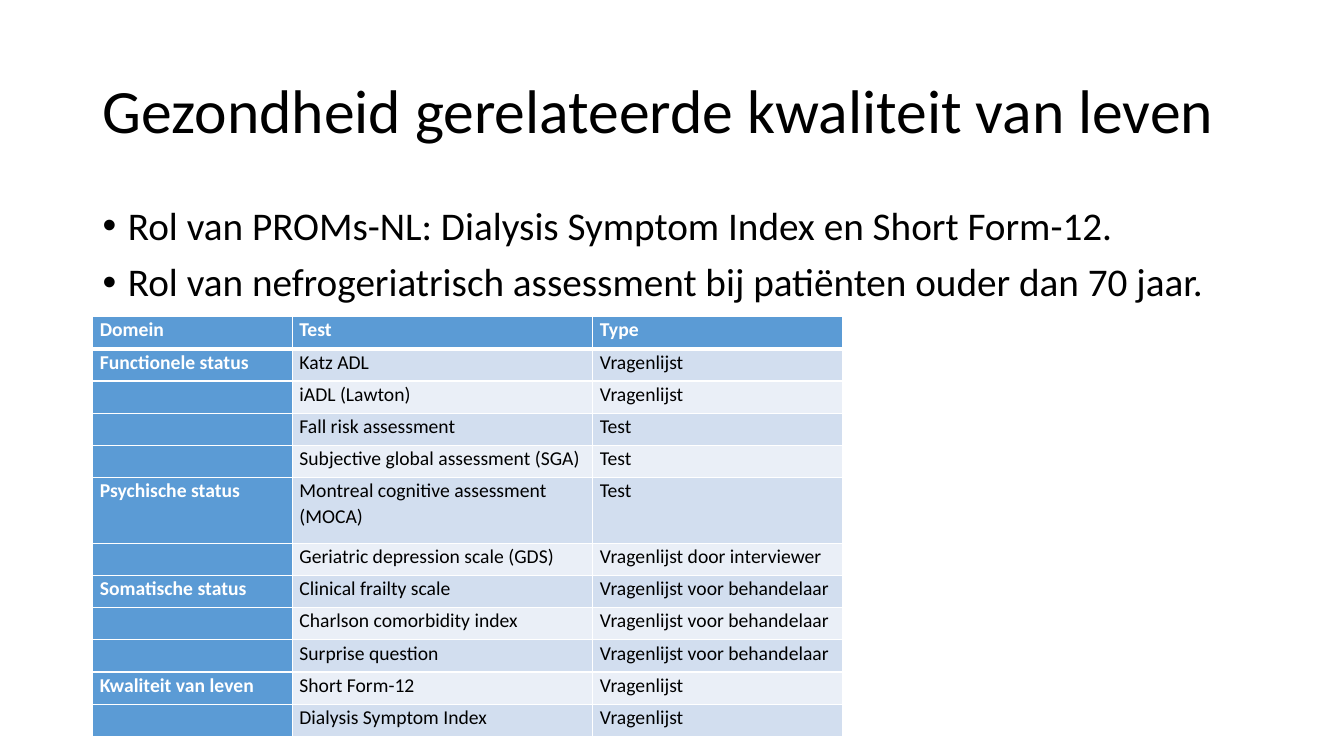
from lxml.etree import SubElement
from pptx import Presentation
from pptx.dml.color import RGBColor
from pptx.enum.text import MSO_ANCHOR
from pptx.oxml.ns import qn
from pptx.util import Inches, Pt

COLORS = {"text": "000000", "white": "FFFFFF", "header": "5B9BD5",
          "odd": "D2DEEF", "even": "EAEFF7"}
FONT = "Calibri"
LEFT, TEXT_WIDTH = 0.92, 11.5

TITLE = "Gezondheid gerelateerde kwaliteit van leven"
BULLETS = [
    "Rol van PROMs-NL: Dialysis Symptom Index en Short Form-12.",
    "Rol van nefrogeriatrisch assessment bij patiënten ouder dan 70 jaar.",
]
ASSESSMENTS = [
    ("Domein", "Test", "Type"),
    ("Functionele status", "Katz ADL", "Vragenlijst"),
    ("", "iADL (Lawton)", "Vragenlijst"),
    ("", "Fall risk assessment", "Test"),
    ("", "Subjective global assessment (SGA)", "Test"),
    ("Psychische status", "Montreal cognitive assessment (MOCA)", "Test"),
    ("", "Geriatric depression scale (GDS)", "Vragenlijst door interviewer"),
    ("Somatische status", "Clinical frailty scale", "Vragenlijst voor behandelaar"),
    ("", "Charlson comorbidity index", "Vragenlijst voor behandelaar"),
    ("", "Surprise question", "Vragenlijst voor behandelaar"),
    ("Kwaliteit van leven", "Short Form-12", "Vragenlijst"),
    ("", "Dialysis Symptom Index", "Vragenlijst"),
]
COLUMN_WIDTHS = [1.98, 2.98, 2.48]
ROW_HEIGHT, TWO_LINE_HEIGHT = 0.32, 0.65
TWO_LINE_ROW = 5


def style_paragraph(para, size, color, spacing, bold=False):
    para.line_spacing = spacing
    para.font.name = FONT
    para.font.size = Pt(size)
    para.font.bold = bold
    para.font.color.rgb = RGBColor.from_string(COLORS[color])


def add_bullet(para):
    properties = para._p.get_or_add_pPr()
    properties.set("marL", str(Inches(0.25)))
    properties.set("indent", str(-Inches(0.25)))
    bullet_font = properties.makeelement(qn("a:buFont"), {"typeface": "Arial"})
    bullet = properties.makeelement(qn("a:buChar"), {"char": "•"})
    default_font = properties.find(qn("a:defRPr"))
    default_font.addprevious(bullet_font)
    default_font.addprevious(bullet)


def add_text(page, top, height, lines, size, anchor, bulleted=False):
    box = page.shapes.add_textbox(Inches(LEFT), Inches(top),
                                  Inches(TEXT_WIDTH), Inches(height))
    frame = box.text_frame
    frame.word_wrap = True
    frame.vertical_anchor = anchor
    frame.text = "\n".join(lines)
    for para in frame.paragraphs:
        style_paragraph(para, size, "text", 0.9)
        if bulleted:
            para.space_before = Pt(10)
            add_bullet(para)


def add_borders(cell, bottom_width):
    properties = cell._tc.get_or_add_tcPr()
    for side, width in (("L", 1), ("R", 1), ("T", 1), ("B", bottom_width)):
        line = SubElement(properties, qn(f"a:ln{side}"), w=str(Pt(width)))
        fill = SubElement(line, qn("a:solidFill"))
        SubElement(fill, qn("a:srgbClr"), val=COLORS["white"])


def fill_cell(cell, text, row, column):
    is_heading = row == 0 or column == 0
    background = "header" if is_heading else ("odd" if row % 2 else "even")
    cell.margin_left = cell.margin_right = Inches(0.07)
    cell.margin_top = cell.margin_bottom = 0
    add_borders(cell, 3 if row == 0 else 1)
    cell.fill.solid()
    cell.fill.fore_color.rgb = RGBColor.from_string(COLORS[background])
    if text:
        cell.text = text
        style_paragraph(cell.text_frame.paragraphs[0], 14,
                        "white" if is_heading else "text", 1.07, is_heading)


def add_assessment_table(page):
    heights = [TWO_LINE_HEIGHT if row == TWO_LINE_ROW else ROW_HEIGHT
               for row in range(len(ASSESSMENTS))]
    table = page.shapes.add_table(
        len(heights), len(COLUMN_WIDTHS), Inches(LEFT), Inches(3.14),
        Inches(sum(COLUMN_WIDTHS)), Inches(sum(heights))).table
    table.first_col = True
    for column, width in zip(table.columns, COLUMN_WIDTHS):
        column.width = Inches(width)
    for row, texts in enumerate(ASSESSMENTS):
        table.rows[row].height = Inches(heights[row])
        for column, text in enumerate(texts):
            fill_cell(table.cell(row, column), text, row, column)


def main():
    deck = Presentation()
    deck.slide_width, deck.slide_height = Inches(13.33), Inches(7.5)
    page = deck.slides.add_slide(deck.slide_layouts[6])
    add_text(page, 0.4, 1.45, [TITLE], 44, MSO_ANCHOR.MIDDLE)
    add_text(page, 2, 4.76, BULLETS, 28, MSO_ANCHOR.TOP, bulleted=True)
    add_assessment_table(page)
    deck.save("out.pptx")


if __name__ == "__main__":
    main()
